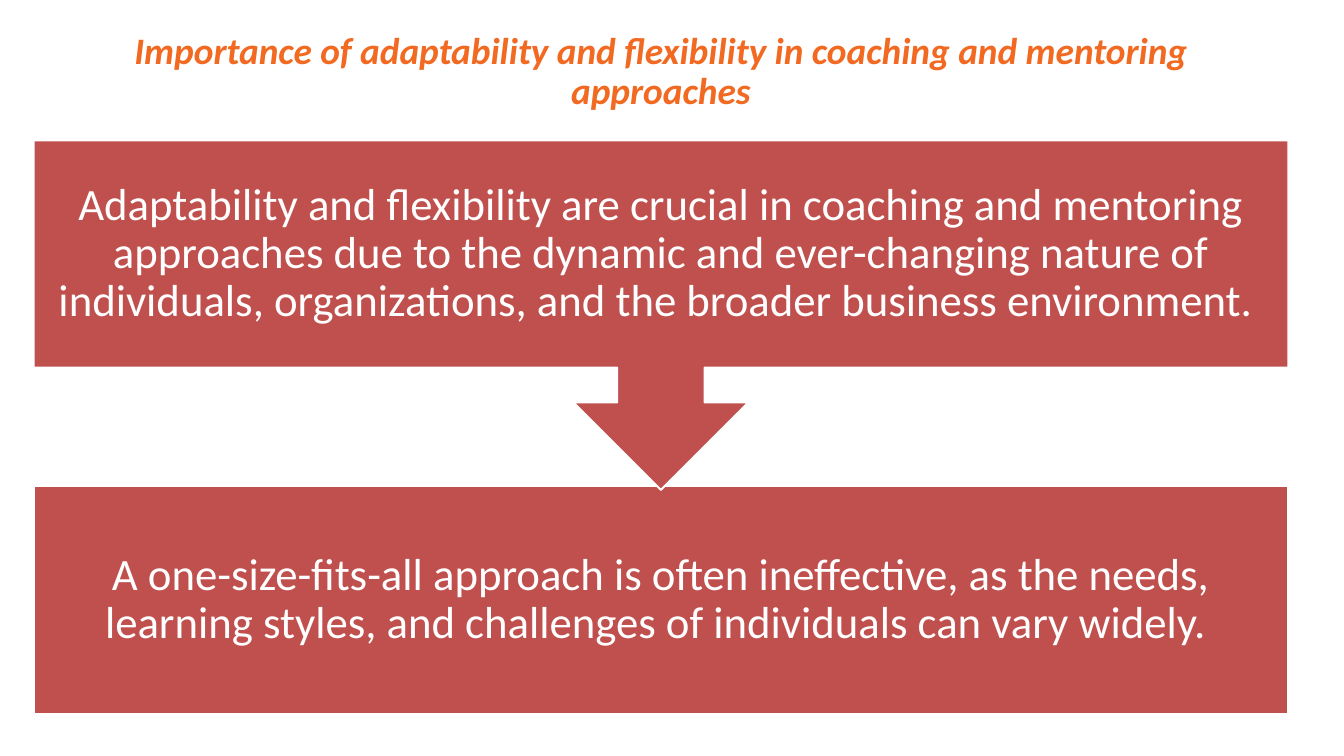
import pptx
import pptx.util
import pptx.dml.color
import pptx.enum.shapes
import pptx.enum.text

Pt = pptx.util.Pt
RGB = pptx.dml.color.RGBColor.from_string
KIND = pptx.enum.shapes.MSO_SHAPE
HUES = {"title": "F26921", "box": "C0504D", "white": "FFFFFF"}
LEFT, WIDTH = 36, 1344.24


def write(shape, text, hue, fonts, frame):
    """Fill a shape with one centred paragraph."""
    body = shape.text_frame
    body.text = text
    for name, val in frame.items():
        setattr(body, name, val)
    para = body.paragraphs[0]
    para.alignment = pptx.enum.text.PP_ALIGN.CENTER
    para.line_spacing = 0.9
    font = para.runs[0].font
    for name, val in fonts.items():
        setattr(font, name, val)
    font.color.rgb = RGB(HUES[hue])


# Slide
deck = pptx.Presentation()
deck.slide_width, deck.slide_height = Pt(1440), Pt(810)
slide = deck.slides.add_slide(deck.slide_layouts[5])
middle = {
    "word_wrap": True,
    "auto_size": pptx.enum.text.MSO_AUTO_SIZE.NONE,
    "vertical_anchor": pptx.enum.text.MSO_ANCHOR.MIDDLE,
}

# Title, lifted above the middle by its bottom inset
title = slide.shapes.title
place = {"left": LEFT, "top": 21.6, "width": WIDTH, "height": 155.52}
for name, val in place.items():
    setattr(title, name, Pt(val))
write(
    title,
    "Importance of adaptability and flexibility in coaching and mentoring approaches",
    "title",
    {"name": "Calibri", "size": Pt(40), "bold": True, "italic": True},
    {**middle, "margin_bottom": Pt(47)},
)

# Two steps: the lower box first, so the arrow tip lies over it
sides = ("left", "top", "right", "bottom")
inset = {f"margin_{side}": Pt(26.64) for side in sides}
steps = [
    (KIND.RECTANGLE, 521.28, 243.36,
     "A one-size-fits-all approach is often ineffective, as the needs, "
     "learning styles, and challenges of individuals can vary widely. "),
    (KIND.DOWN_ARROW_CALLOUT, 150.48, 374.4,
     "Adaptability and flexibility are crucial in coaching and mentoring "
     "approaches due to the dynamic and ever-changing nature of individuals, "
     "organizations, and the broader business environment. "),
]
for kind, top, height, text in steps:
    box = slide.shapes.add_shape(kind, Pt(LEFT), Pt(top), Pt(WIDTH), Pt(height))
    box.shadow.inherit = False
    box.fill.solid()
    box.fill.fore_color.rgb = RGB(HUES["box"])
    box.line.color.rgb = RGB(HUES["white"])
    box.line.width = Pt(2)
    write(box, text, "white", {"name": "Calibri", "size": Pt(48)}, {**middle, **inset})

deck.save("out.pptx")
